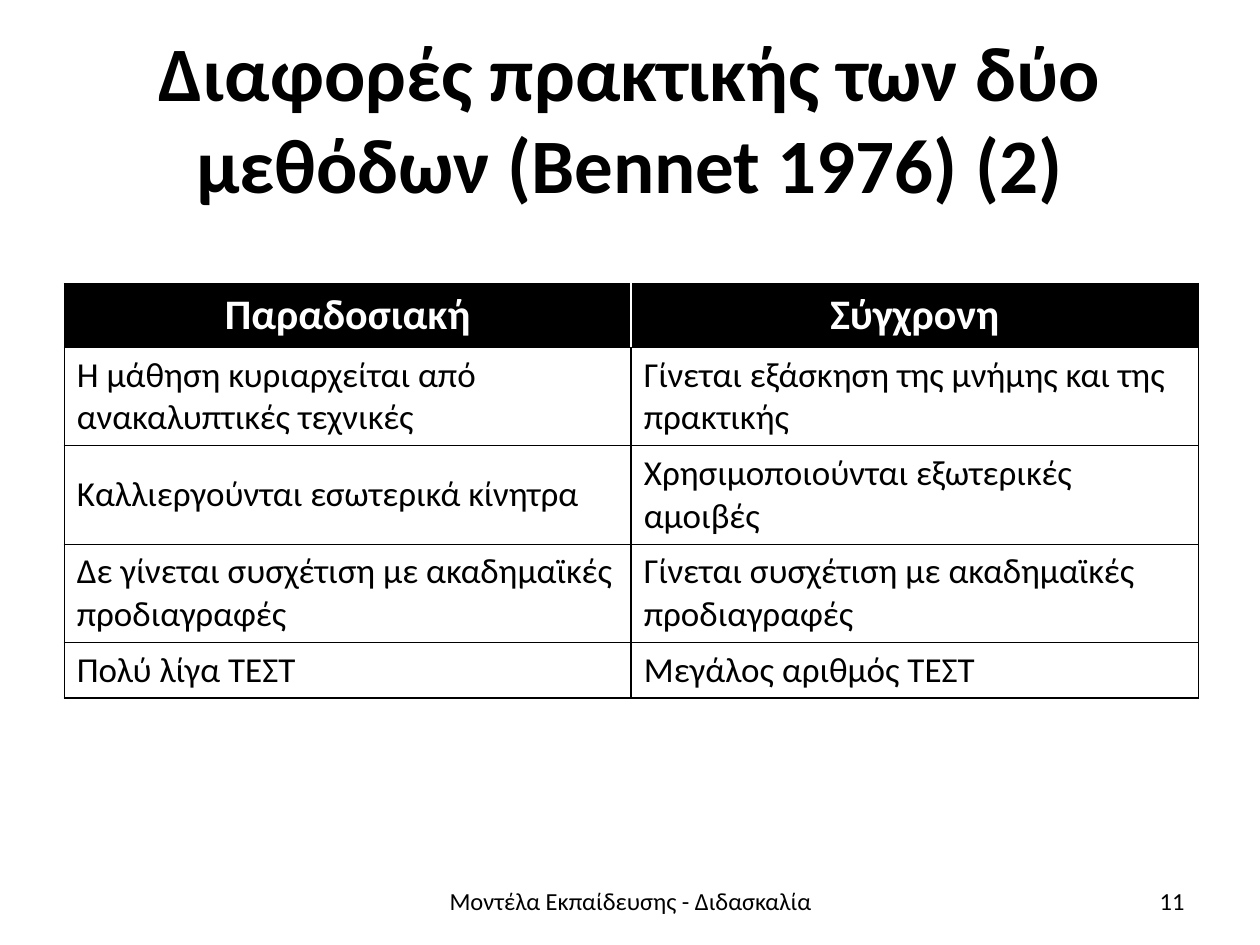
import pptx
import pptx.util
import pptx.dml.color
import pptx.enum.text
import pptx.oxml
import pptx.oxml.ns
from lxml import etree

Inches = pptx.util.Inches
Pt = pptx.util.Pt
ALIGN = pptx.enum.text.PP_ALIGN
MIDDLE = pptx.enum.text.MSO_ANCHOR.MIDDLE
BLACK, WHITE = "000000", "FFFFFF"

ROWS = [
    ("Παραδοσιακή", "Σύγχρονη"),
    ("Η μάθηση κυριαρχείται από ανακαλυπτικές τεχνικές",
     "Γίνεται εξάσκηση της μνήμης και της πρακτικής"),
    ("Καλλιεργούνται εσωτερικά κίνητρα", "Χρησιμοποιούνται εξωτερικές αμοιβές"),
    ("Δε γίνεται συσχέτιση με ακαδημαϊκές προδιαγραφές",
     "Γίνεται συσχέτιση με ακαδημαϊκές προδιαγραφές"),
    ("Πολύ λίγα ΤΕΣΤ", "Μεγάλος αριθμός ΤΕΣΤ"),
]


def color(code):
    return pptx.dml.color.RGBColor.from_string(code)


class Deck:
    font = "Calibri"

    def __init__(self):
        self.show = pptx.Presentation()
        self.show.slide_width, self.show.slide_height = Inches(10), Inches(7.5)
        self.slide = self.show.slides.add_slide(self.show.slide_layouts[5])

    def words(self, frame, text, align, size, bold=False, ink=BLACK):
        """Put one styled run into the first paragraph."""
        para = frame.paragraphs[0]
        para.alignment = align
        run = para.add_run()
        run.text = text
        style = {"name": self.font, "size": Pt(size), "bold": bold}
        for key, value in style.items():
            setattr(run.font, key, value)
        run.font.color.rgb = color(ink)

    def center(self, frame):
        """Wrap the text and anchor it in the middle."""
        frame.word_wrap = True
        frame.vertical_anchor = MIDDLE

    def title(self, text, left, top, width, height):
        shape = self.slide.shapes.title
        place = {"left": left, "top": top, "width": width, "height": height}
        for key, value in place.items():
            setattr(shape, key, Inches(value))
        self.center(shape.text_frame)
        self.words(shape.text_frame, text, ALIGN.CENTER, 44, bold=True)

    def label(self, text, align, *place):
        box = self.slide.shapes.add_textbox(*map(Inches, place))
        self.center(box.text_frame)
        self.words(box.text_frame, text, align, 14)

    def border(self, cell, sides):
        """Draw cell borders from a dict of side to (colour, points)."""
        props = cell._tc.get_or_add_tcPr()
        for spot, side in enumerate("LRTB"):
            ink, width = sides[side]
            line = etree.Element(pptx.oxml.ns.qn("a:ln" + side), w=str(int(Pt(width))))
            fill = etree.SubElement(line, pptx.oxml.ns.qn("a:solidFill"))
            etree.SubElement(fill, pptx.oxml.ns.qn("a:srgbClr"), val=ink)
            props.insert(spot, line)

    def table(self, rows, left, top, wide, high):
        count = len(rows[0])
        frame = self.slide.shapes.add_table(
            len(rows), count, Inches(left), Inches(top),
            Inches(wide * count), Inches(high * len(rows)))
        for r, row in enumerate(rows):
            head = r == 0
            back, ink = (BLACK, WHITE) if head else (WHITE, BLACK)
            align, size = (ALIGN.CENTER, 24) if head else (ALIGN.LEFT, 20)
            edge, inner = (BLACK, 0.75), (ink, 1)
            for c, text in enumerate(row):
                cell = frame.table.cell(r, c)
                cell.fill.solid()
                cell.fill.fore_color.rgb = color(back)
                cell.vertical_anchor = MIDDLE
                self.border(cell, {"L": inner if c else edge,
                                   "R": inner if c < count - 1 else edge,
                                   "T": edge, "B": edge})
                self.words(cell.text_frame, text, align, size, head, ink)


def main():
    deck = Deck()
    deck.title("Διαφορές πρακτικής των δύο μεθόδων (Bennet 1976) (2)", 0.5, 0.3, 9, 1.25)
    deck.table(ROWS, 0.51, 2.25, 4.5, 0.41)
    deck.label("Μοντέλα Εκπαίδευσης - Διδασκαλία", ALIGN.CENTER, 3.42, 6.95, 3.17, 0.4)
    deck.label("11", ALIGN.RIGHT, 7.17, 6.95, 2.33, 0.4)
    deck.show.save("out.pptx")


if __name__ == "__main__":
    main()
